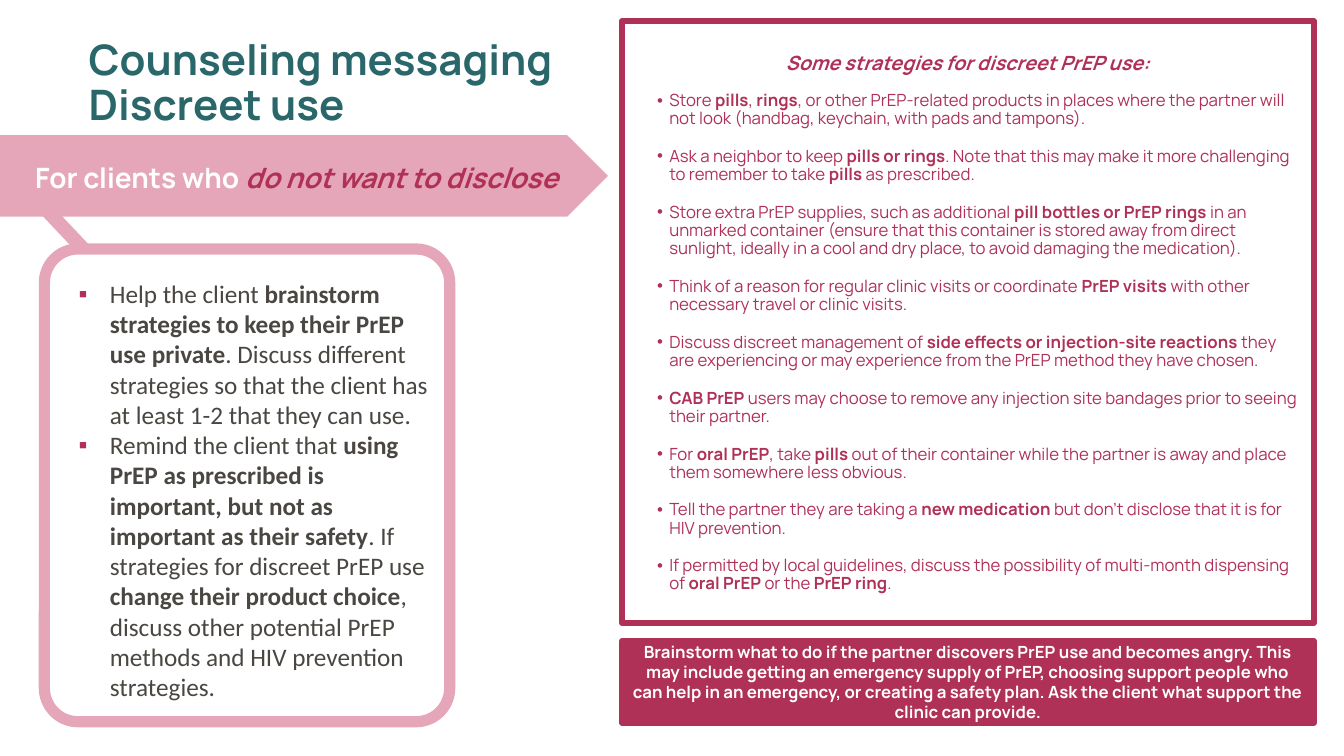
"""Build the slide on counseling clients who use PrEP discreetly."""
import pptx
import pptx.dml.color
import pptx.enum.shapes
import pptx.enum.text
import pptx.oxml
import pptx.oxml.ns
import pptx.util
from pptx.util import Inches, Pt

RGBColor = pptx.dml.color.RGBColor
SHAPES = pptx.enum.shapes.MSO_SHAPE
ALIGN = pptx.enum.text.PP_ALIGN
ANCHOR = pptx.enum.text.MSO_ANCHOR

TEAL = RGBColor(0x29, 0x67, 0x6B)
PINK = RGBColor(0xE6, 0xA6, 0xBA)
BERRY = RGBColor(0xAF, 0x31, 0x58)
GREY = RGBColor(0x4A, 0x46, 0x42)
WHITE = RGBColor(0xFF, 0xFF, 0xFF)

ADVICE = [
    "Help the client **brainstorm strategies to keep their PrEP use private**. Discuss different "
    "strategies so that the client has at least 1-2 that they can use.",
    "Remind the client that **using PrEP as prescribed is important, but not as important as their "
    "safety**. If strategies for discreet PrEP use **change their product choice**, discuss other "
    "potential PrEP methods and HIV prevention strategies.",
]
STRATEGIES = [
    "Store **pills**, **rings**, or other PrEP-related products in places where the partner will "
    "not look (handbag, keychain, with pads and tampons).",
    "Ask a neighbor to keep **pills or rings**. Note that this may make it more challenging to "
    "remember to take **pills** as prescribed.",
    "Store extra PrEP supplies, such as additional **pill bottles or PrEP rings** in an unmarked "
    "container (ensure that this container is stored away from direct sunlight, ideally in a cool "
    "and dry place, to avoid damaging the medication).",
    "Think of a reason for regular clinic visits or coordinate **PrEP visits** with other "
    "necessary travel or clinic visits.",
    "Discuss discreet management of **side effects or injection-site reactions** they are "
    "experiencing or may experience from the PrEP method they have chosen.",
    "**CAB PrEP** users may choose to remove any injection site bandages prior to seeing their "
    "partner.",
    "For **oral PrEP**, take **pills** out of their container while the partner is away and place "
    "them somewhere less obvious.",
    "Tell the partner they are taking a **new medication** but don’t disclose that it is for HIV "
    "prevention.",
    "If permitted by local guidelines, discuss the possibility of multi-month dispensing of "
    "**oral PrEP** or the **PrEP ring**.",
]
CONTINGENCY = (
    "**Brainstorm what to do if the partner discovers PrEP use and becomes angry. This may include "
    "getting an emergency supply of PrEP, choosing support people who can help in an emergency, or "
    "creating a safety plan. Ask the client what support the clinic can provide.**"
)


def add_panel(preset, box, fill, outline, weight):
    panel = slide.shapes.add_shape(preset, *[Inches(length) for length in box])
    panel.shadow.inherit = False
    panel.fill.solid()
    panel.fill.fore_color.rgb = fill
    panel.line.color.rgb = outline
    panel.line.width = Pt(weight)
    return panel


def write(paragraph, marked, font, size, color, bullet=None, margin=0, hanging=0):
    """Write text whose **marked** parts are bold, with an optional bullet."""
    paragraph.alignment = ALIGN.LEFT if bullet else ALIGN.CENTER
    if bullet:
        props = paragraph._p.get_or_add_pPr()
        props.set("marL", str(Inches(margin)))
        props.set("indent", str(-Inches(hanging)))
        namespace = pptx.oxml.ns.nsdecls("a")
        for markup in (
            f'<a:buClr {namespace}><a:srgbClr val="{BERRY}"/></a:buClr>',
            f'<a:buFont {namespace} typeface="Arial"/>',
            f'<a:buChar {namespace} char="{bullet}"/>',
        ):
            props.append(pptx.oxml.parse_xml(markup))
    for index, part in enumerate(marked.split("**")):
        if part:
            run = paragraph.add_run()
            run.text = part
            run.font.name = font
            run.font.size = Pt(size)
            run.font.color.rgb = color
            run.font.bold = index % 2 == 1


deck = pptx.Presentation()
deck.slide_width = Inches(13.33)
deck.slide_height = Inches(7.5)
slide = deck.slides.add_slide(deck.slide_layouts[1])

title = slide.shapes.title
title.left, title.top, title.width, title.height = map(Inches, (0, 0.21, 11.5, 1.25))
title.text_frame.text = "Counseling messaging\vDiscreet use"
title.text_frame.auto_size = pptx.enum.text.MSO_AUTO_SIZE.NONE
title.text_frame.vertical_anchor = ANCHOR.MIDDLE
title.text_frame.margin_left = Inches(0.88)
heading = title.text_frame.paragraphs[0]
heading.alignment = ALIGN.LEFT
heading.line_spacing = 0.9
for run in heading.runs:
    run.font.name = "Manrope"
    run.font.size = Pt(30)
    run.font.bold = True
    run.font.color.rgb = TEAL

banner = add_panel(SHAPES.PENTAGON, (0, 1.34, 6.03, 0.81), PINK, PINK, 1)
banner.line.fill.background()
audience = slide.shapes.add_textbox(Inches(0.25), Inches(1.54), Inches(5.77), Inches(0.44))
audience.text_frame.word_wrap = True
audience_line = audience.text_frame.paragraphs[0]
write(audience_line, "**For clients who ****do not want to disclose**", "Manrope", 20, WHITE)
audience_line.alignment = ALIGN.LEFT
audience_line.runs[1].font.italic = True
audience_line.runs[1].font.color.rgb = BERRY

link = slide.shapes.add_connector(
    pptx.enum.shapes.MSO_CONNECTOR.STRAIGHT,
    Inches(0.44), Inches(2.06), Inches(0.95), Inches(2.6))
link.line.color.rgb = PINK
link.line.width = Pt(10)
link._element.spPr.append(
    pptx.oxml.parse_xml(f'<a:effectLst {pptx.oxml.ns.nsdecls("a")}/>'))

card = add_panel(SHAPES.ROUNDED_RECTANGLE, (0.44, 2.47, 4.02, 4.69), WHITE, PINK, 8)
card.adjustments[0] = 0.083

advice = slide.placeholders[1]
card._element.addnext(advice._element)
advice.left, advice.top, advice.width, advice.height = map(Inches, (0.68, 2.71, 3.78, 4.34))
advice.text_frame.auto_size = pptx.enum.text.MSO_AUTO_SIZE.NONE
for index, point in enumerate(ADVICE):
    paragraph = advice.text_frame.add_paragraph() if index else advice.text_frame.paragraphs[0]
    write(paragraph, point, "Calibri", 18, GREY, "▪", 0.31, 0.31)
    paragraph.space_before = Pt(0)

strategies = add_panel(SHAPES.RECTANGLE, (6.17, 0.21, 6.86, 5.97), WHITE, BERRY, 4.5)
strategies.text_frame.word_wrap = True
strategies.text_frame.vertical_anchor = ANCHOR.MIDDLE
strategies_heading = strategies.text_frame.paragraphs[0]
write(strategies_heading, "**Some strategies for discreet PrEP use:**", "Manrope", 14, BERRY)
strategies_heading.runs[0].font.italic = True
for index, strategy in enumerate(STRATEGIES):
    paragraph = strategies.text_frame.add_paragraph()
    write(paragraph, strategy, "Manrope", 12, BERRY, "•", 0.37, 0.12)
    paragraph.line_spacing = 0.9
    paragraph.space_before = Pt(14 if index else 13)

contingency = add_panel(SHAPES.RECTANGLE, (6.17, 6.36, 6.86, 0.81), BERRY, BERRY, 4.5)
contingency.text_frame.word_wrap = True
contingency.text_frame.vertical_anchor = ANCHOR.MIDDLE
write(contingency.text_frame.paragraphs[0], CONTINGENCY, "Manrope", 12, WHITE)

deck.save("out.pptx")
